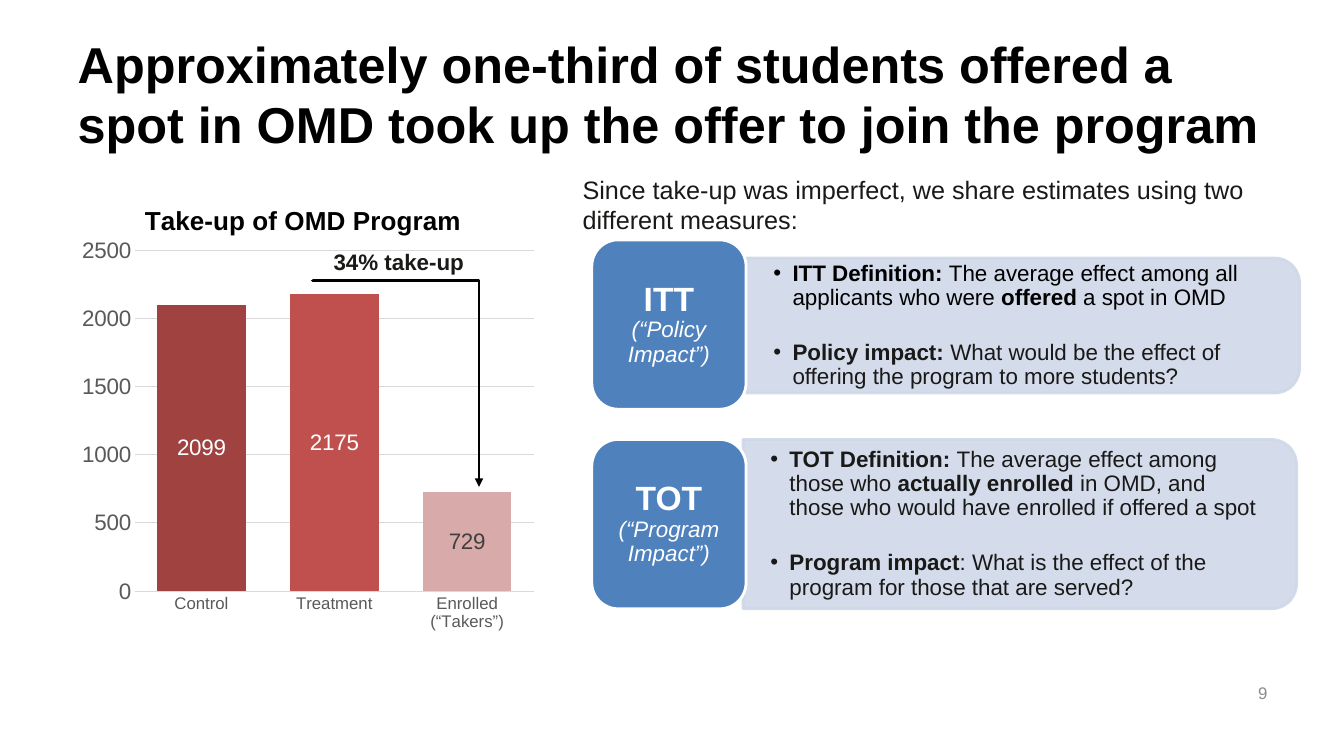
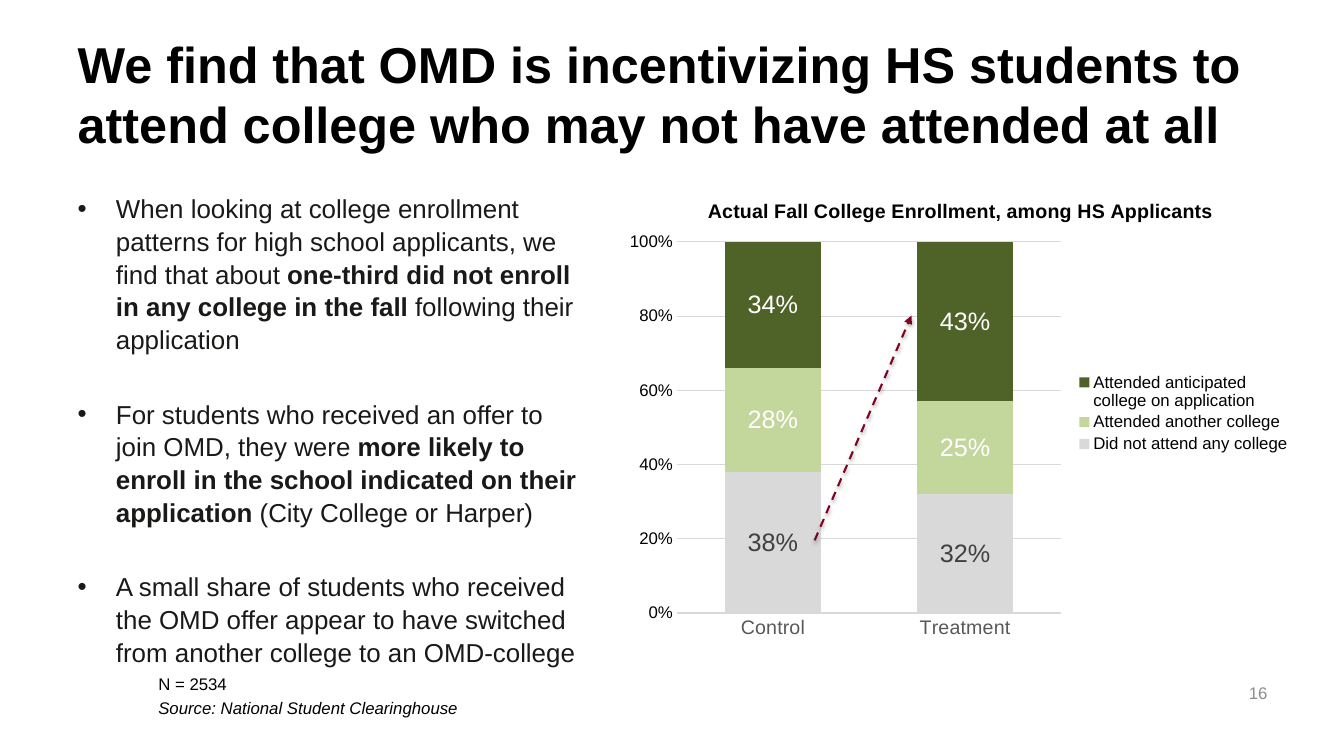
import math

import pptx
import pptx.chart.data
import pptx.dml.color
import pptx.enum.chart
import pptx.enum.dml
import pptx.enum.shapes
import pptx.enum.text
import pptx.oxml
import pptx.oxml.ns
import pptx.util

FONT = "Arial"
BLACK, INK, WHITE = "000000", "191918", "FFFFFF"
GREY, DARK, RULE, PAGE = "595959", "404040", "D9D9D9", "8C8C8C"
BLUE, PALE, WINE = "4F81BD", "D0D8E8", "7C0622"

Anchor = pptx.enum.text.MSO_ANCHOR
Align = pptx.enum.text.PP_ALIGN
Kind = pptx.enum.chart.XL_CHART_TYPE
Link = pptx.enum.shapes.MSO_CONNECTOR
Pt = pptx.util.Pt
qn = pptx.oxml.ns.qn


def px(n):
    """Length in EMU, at 100 px to the inch."""
    return pptx.util.Emu(round(n * 9144))


def color(code):
    return pptx.dml.color.RGBColor.from_string(code)


def node(parent, tag, **attrs):
    """Append a child element with the given attributes."""
    child = pptx.oxml.ns.qn(tag)
    child = parent.makeelement(child, {k: str(v) for k, v in attrs.items()})
    parent.append(child)
    return child


def style(font, size, ink, bold=None):
    font.name, font.size, font.bold = FONT, Pt(size), bold
    font.color.rgb = color(ink)


def stroke(line, ink, width):
    line.color.rgb = color(ink)
    line.width = Pt(width)


def move(shape, at):
    shape.left, shape.top, shape.width, shape.height = map(px, at)


def write(frame, rows, size, ink, bold=None, gap=0, lead=1.0, dent=0,
          align=Align.LEFT, anchor=Anchor.TOP, pad=(10, 5, 10, 5)):
    """Fill a frame; each row lists runs, every second one bold."""
    frame.word_wrap = True
    frame.auto_size = pptx.enum.text.MSO_AUTO_SIZE.NONE
    frame.vertical_anchor = anchor
    (frame.margin_left, frame.margin_top,
     frame.margin_right, frame.margin_bottom) = map(px, pad)
    for i, row in enumerate(rows):
        para = frame.add_paragraph() if i else frame.paragraphs[0]
        prop = para._p.get_or_add_pPr()
        prop.set("marL", str(px(dent)))
        prop.set("indent", str(px(-dent)))
        if dent:
            node(prop, "a:buFont", typeface=FONT)
            node(prop, "a:buChar", char="•")
        else:
            node(prop, "a:buNone")
        para.alignment, para.line_spacing = align, lead
        para.space_before, para.space_after = Pt(gap if i else 0), Pt(0)
        style(para.font, size, ink, bold)
        for j, text in enumerate(row):
            run = para.add_run()
            run.text = text
            if j % 2:
                run.font.bold = True
    return frame.paragraphs


def label(slide, at, text, size, ink, **more):
    box = slide.shapes.add_textbox(*map(px, at))
    write(box.text_frame, [[text]], size, ink, **more)


def start(deck, layout, title, number):
    """Add a slide with its title and page number."""
    slide = deck.slides.add_slide(deck.slide_layouts[layout])
    head = slide.shapes.title
    move(head, (67, 30, 1200, 125))
    write(head.text_frame, [[title]], 36, BLACK, bold=True,
          anchor=Anchor.MIDDLE)
    label(slide, (1222, 667, 45, 40), number, 12, PAGE,
          align=Align.RIGHT, anchor=Anchor.MIDDLE)
    return slide


def place(part, index, spot, inner=False):
    """Give a chart part a manual layout in fractions of the chart."""
    lay = part.find(qn("c:layout"))
    if lay is None:
        lay = part.makeelement(qn("c:layout"), {})
        part.insert(index, lay)
    hand = node(lay, "c:manualLayout")
    if inner:
        node(hand, "c:layoutTarget", val="inner")
    for key in ("xMode", "yMode"):
        node(hand, "c:" + key, val="edge")
    for key, val in zip("xywh", spot):
        node(hand, "c:" + key, val=val)


def chart(slide, kind, at, title, size, spot, plot, cats, rows,
          text, cat, val, top, step, gap, fmt="General"):
    """Add a stacked column chart; text, cat and val are font sizes."""
    data = pptx.chart.data.CategoryChartData(number_format=fmt)
    data.categories = cats
    for name, vals, *_ in rows:
        data.add_series(name, vals)
    graph = slide.shapes.add_chart(kind, *map(px, at), data).chart
    style(graph.font, 10, BLACK)
    graph.has_legend = False
    graph.has_title = True
    head = graph.chart_title
    head.text_frame.text = title
    style(head.text_frame.paragraphs[0].font, size, BLACK, True)
    place(head.element, 1, spot)
    place(graph.element.find(".//" + qn("c:plotArea")), 0, plot, True)

    bars = graph.plots[0]
    bars.gap_width, bars.overlap = gap, 100
    bars.vary_by_categories = False
    for series, (_, _, fill, ink) in zip(bars.series, rows):
        series.format.fill.solid()
        series.format.fill.fore_color.rgb = color(fill)
        tags = series.data_labels
        tags.show_value = True
        tags.number_format, tags.number_format_is_linked = fmt, False
        tags.position = pptx.enum.chart.XL_LABEL_POSITION.CENTER
        style(tags.font, text, ink)

    for axis, (points, ink) in ((graph.category_axis, cat),
                                (graph.value_axis, val)):
        axis.major_tick_mark = pptx.enum.chart.XL_TICK_MARK.NONE
        axis.minor_tick_mark = pptx.enum.chart.XL_TICK_MARK.NONE
        style(axis.tick_labels.font, points, ink)
    stroke(graph.category_axis.format.line, RULE, 0.75)
    axis = graph.value_axis
    axis.minimum_scale, axis.maximum_scale, axis.major_unit = 0, top, step
    axis.tick_labels.number_format = fmt
    axis.tick_labels.number_format_is_linked = False
    axis.format.line.fill.background()
    stroke(axis.major_gridlines.format.line, RULE, 0.75)
    return graph


def arrow(slide, kind, ends, ink, width):
    """Add an arrow; return it with its empty effect list."""
    link = slide.shapes.add_connector(kind, *map(px, ends))
    stroke(link.line, ink, width)
    node(link.line._get_or_add_ln(), "a:tailEnd", type="triangle")
    return link, node(link.element.spPr, "a:effectLst")


def elbow(slide, x1, y1, x2, y2):
    """Arrow that runs right, then turns down."""
    midx, midy = (x1 + x2) / 2, (y1 + y2) / 2
    halfw, halfh = (y2 - y1) / 2, (x2 - x1) / 2
    ends = (midx + halfw, midy - halfh, midx - halfw, midy + halfh)
    link, _ = arrow(slide, Link.ELBOW, ends, BLACK, 2)
    spec = link.element.spPr
    spec.find(qn("a:xfrm")).set("rot", "16200000")
    geom = spec.find(qn("a:prstGeom"))
    vals = geom.find(qn("a:avLst"))
    if vals is None:
        vals = node(geom, "a:avLst")
    node(vals, "a:gd", name="adj1", fmla="val 200")


def panel(slide, at, rows):
    """Pale box, rounded at the right only, with bullets."""
    x, y, w, h = at
    r = 25
    dots = [(x, y)]
    for cy, first in ((y + r, -90), (y + h - r, 0)):
        for deg in range(first, first + 91, 10):
            turn = math.radians(deg)
            dots.append((x + w - r + r * math.cos(turn),
                         cy + r * math.sin(turn)))
    dots.append((x, y + h))
    dots = [(px(a), px(b)) for a, b in dots]
    path = slide.shapes.build_freeform(*dots[0])
    path.add_line_segments(dots[1:], close=True)
    shape = path.convert_to_shape()
    shape.shadow.inherit = False
    shape.fill.solid()
    shape.fill.fore_color.rgb = color(PALE)
    stroke(shape.line, PALE, 2)
    for tint in shape.element.spPr.iter(qn("a:srgbClr")):
        node(tint, "a:alpha", val=90000)
    return write(shape.text_frame, rows, 16, INK, gap=22, lead=0.9, dent=19,
                 anchor=Anchor.MIDDLE, pad=(27, 0, 38, 0))


def tile(slide, y, name, note):
    shape = slide.shapes.add_shape(
        pptx.enum.shapes.MSO_SHAPE.ROUNDED_RECTANGLE,
        *map(px, (587, y, 153, 168)))
    shape.adjustments[0] = 0.17
    shape.shadow.inherit = False
    shape.fill.solid()
    shape.fill.fore_color.rgb = color(BLUE)
    stroke(shape.line, WHITE, 2)
    head, sub = write(shape.text_frame, [[name], [note]], 16, WHITE,
                      lead=0.9, align=Align.CENTER, anchor=Anchor.MIDDLE,
                      pad=(14, 11, 14, 11))
    style(head.font, 24, WHITE, True)
    sub.font.italic = True


def uptake(deck):
    slide = start(deck, 5, "Approximately one-third of students offered a "
                  "spot in OMD took up the offer to join the program", "9")
    chart(slide, Kind.COLUMN_STACKED, (56, 173, 488, 470),
          "Take-up of OMD Program", 18.6, (0.17, 0.05),
          (0.16, 0.16, 0.81, 0.72),
          ["Control", "Treatment", "Enrolled (“Takers”)"],
          [("Series 1", (2099, None, None), "9F4240", WHITE),
           ("Series 2", (None, 2175, None), "C0504D", WHITE),
           ("Series 3", (None, None, 729), "D9AAAA", DARK)],
          text=16, cat=(12, GREY), val=(16, GREY), top=2500, step=500,
          gap=50)
    elbow(slide, 310, 278, 475, 483)
    label(slide, (321, 241, 165, 37), "34% take-up", 16, INK, bold=True)
    label(slide, (568, 168, 765, 71), "Since take-up was imperfect, we share "
          "estimates using two different measures:", 18, INK)

    policy = panel(slide, (740, 256, 549, 134), [
        ["", "ITT Definition: ", "The average effect among all applicants "
         "who were ", "offered", " a spot in OMD"],
        ["", "Policy impact: ", "What would be the effect of offering the "
         "program to more students?"]])
    policy[0].font.color.rgb = color(BLACK)
    tile(slide, 238, "ITT", "(“Policy Impact”)")
    panel(slide, (737, 436, 549, 168), [
        ["", "TOT Definition: ", "The average effect among those who ",
         "actually enrolled ", "in OMD, and those who would have enrolled "
         "if offered a spot"],
        ["", "Program impact", ": What is the effect of the program for "
         "those that are served?"]])
    tile(slide, 436, "TOT", "(“Program Impact”)")


def enroll(deck):
    slide = start(deck, 3, "We find that OMD is incentivizing HS students to "
                  "attend college who may not have attended at all", "16")
    body, foot = slide.placeholders[1], slide.placeholders[2]
    move(body, (67, 185, 528, 452))
    write(body.text_frame, [
        ["When looking at college enrollment patterns for high school "
         "applicants, we find that about ", "one-third did not enroll in any "
         "college in the fall ", "following their application"],
        ["For students who received an offer to join OMD, they were ",
         "more likely to enroll in the school indicated on their "
         "application ", "(City College or Harper)"],
        ["A small share of students who received the OMD offer appear to "
         "have switched from another college to an OMD-college"]],
        18.5, INK, gap=30, lead=1.05, dent=38)
    move(foot, (147, 670, 1057, 40))
    notes = write(foot.text_frame, [
        ["N = 2534"], ["Source: National Student Clearinghouse"]],
        12, BLACK, gap=3, anchor=Anchor.MIDDLE)
    notes[1].font.italic = True

    graph = chart(
        slide, Kind.COLUMN_STACKED_100, (610, 174, 681, 472),
        "Actual Fall College Enrollment, among HS Applicants", 14,
        (0.13, 0.04), (0.09, 0.14, 0.56, 0.78), ["Control", "Treatment"],
        [("Did not attend any college", (0.38, 0.32), RULE, DARK),
         ("Attended another college", (0.28, 0.25), "C3D69B", WHITE),
         ("Attended anticipated college on application", (0.34, 0.43),
          "4F6228", WHITE)],
        text=18, cat=(14, GREY), val=(12, BLACK), top=1, step=0.2,
        gap=100, fmt="0%")
    graph.has_legend = True
    graph.legend.position = pptx.enum.chart.XL_LEGEND_POSITION.RIGHT
    graph.legend.include_in_layout = False
    style(graph.legend.font, 12, BLACK)

    link, glow = arrow(slide, Link.STRAIGHT, (808, 536, 904, 313), WINE, 1.5)
    link.line.dash_style = pptx.enum.dml.MSO_LINE.DASH
    shade = node(glow, "a:outerShdw", blurRad=Pt(3.1), dist=Pt(1.8),
                 dir=5400000, rotWithShape=0)
    node(node(shade, "a:srgbClr", val=BLACK), "a:alpha", val=35000)


def main():
    deck = pptx.Presentation()
    deck.slide_width, deck.slide_height = px(1333), px(750)
    uptake(deck)
    enroll(deck)
    deck.save("out.pptx")


if __name__ == "__main__":
    main()
